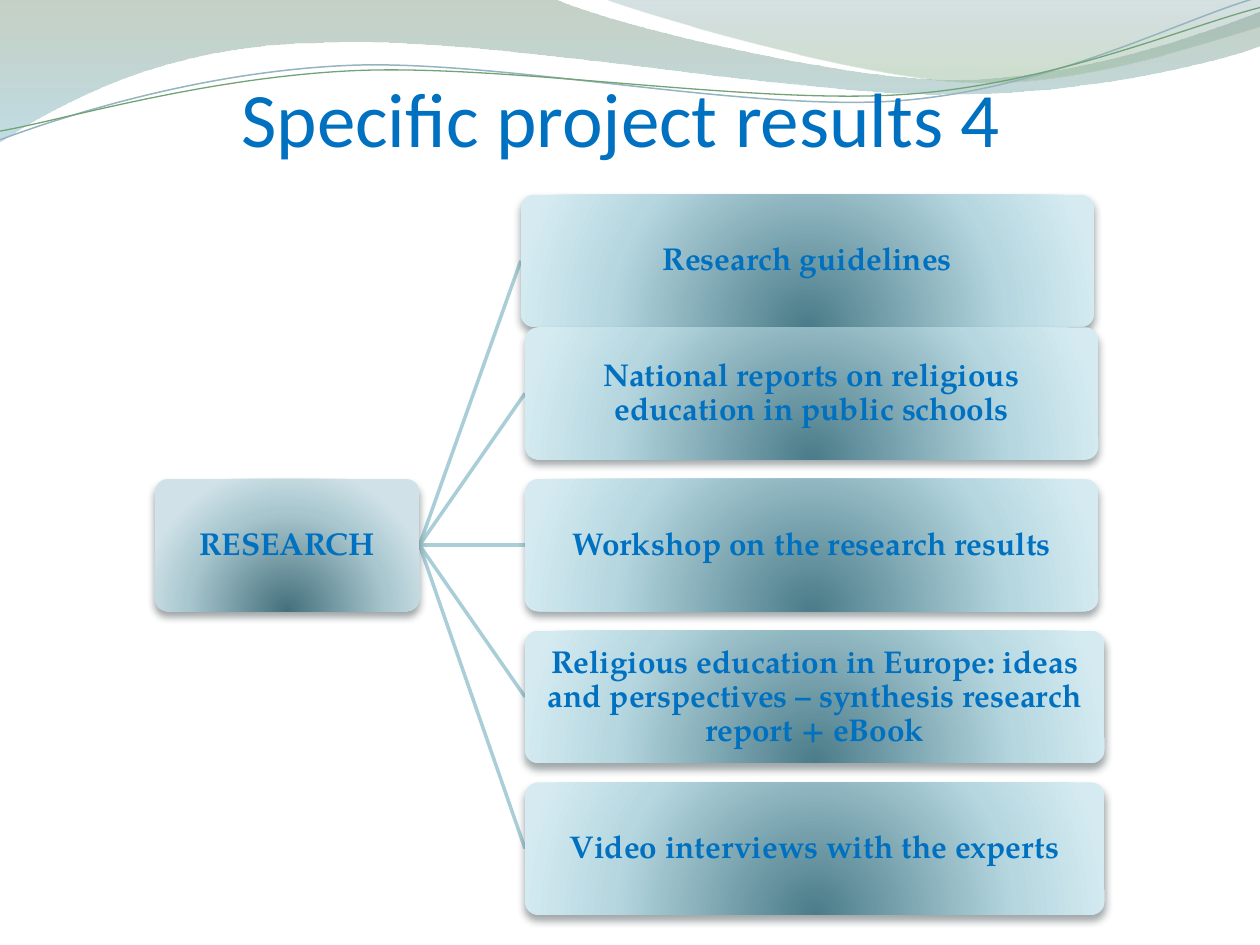
from lxml.etree import SubElement
from pptx import Presentation
from pptx.dml.color import RGBColor
from pptx.enum.shapes import MSO_CONNECTOR, MSO_SHAPE
from pptx.enum.text import MSO_ANCHOR, PP_ALIGN
from pptx.oxml import parse_xml
from pptx.oxml.ns import nsdecls, qn
from pptx.util import Pt

COLORS = {
    "text": "0070C0", "link": "A9CED7",
    "wave_blue": "94B5BE", "wave_green": "72A376",
    "root_shadow": "354245", "result_shadow": "3B484C",
}
# Gradient stops: position %, colour, opacity %
ROOT_STOPS = [(0, "44707C", 100), (68, "A9C7CF", 100), (100, "D0E2E8", 100)]
RESULT_STOPS = [(0, "4B7C89", 100), (68, "B6D7E0", 100), (100, "D5EBF1", 100)]
LINEAR = '<a:lin ang="5400000" scaled="1"/>'
RADIAL = ('<a:path path="circle">'
          '<a:fillToRect l="50000" t="130000" r="50000" b="-30000"/></a:path>')


def set_gradient(sp, stops, direction):
    gs = "".join(
        f'<a:gs pos="{pos * 1000}"><a:srgbClr val="{color}">'
        f'<a:alpha val="{alpha * 1000}"/></a:srgbClr></a:gs>'
        for pos, color, alpha in stops)
    fill = parse_xml(f'<a:gradFill {nsdecls("a")} rotWithShape="1">'
                     f'<a:gsLst>{gs}</a:gsLst>{direction}</a:gradFill>')
    sp._element.spPr.insert(2, fill)  # after the position and the geometry


def add_curve(shapes, start, segments, close):
    """Draw lines (2 numbers) and Bezier segments (6 numbers), in points."""
    points = [(seg[i] * 100, seg[i + 1] * 100)
              for seg in segments for i in range(0, len(seg), 2)]
    builder = shapes.build_freeform(start[0] * 100, start[1] * 100, scale=Pt(1) / 100)
    builder.add_line_segments(points, close=close)
    sp = builder.convert_to_shape()
    sp.shadow.inherit = False
    steps = iter(list(sp._element.iter(qn("a:lnTo"))))
    for seg in segments:
        first = next(steps)
        if len(seg) == 6:  # join three steps into one Bezier segment
            first.tag = qn("a:cubicBezTo")
            for _ in range(2):
                step = next(steps)
                first.append(step[0])
                step.getparent().remove(step)
    return sp


prs = Presentation()
prs.slide_width, prs.slide_height = Pt(720), Pt(540)
s = prs.slides.add_slide(prs.slide_layouts[5])

# Wave bands across the top
bands = [
    ((0, -0.7),
     [(316.8, -0.7), (342.7, 12.2, 478, 45.4, 545.8, 45.4),
      (614.2, 45.4, 689.8, 18.7, 720, 6.5), (720.7, 25.9),
      (707.8, 31.7, 626.4, 54.7, 537.1, 54), (447.8, 54, 275, 20.2, 185, 24.5),
      (92.9, 25.2, 33.1, 59.8, -0.7, 81.4)],
     [(0, "809980", 45), (100, "8DC1CF", 55)]),
    ((344.9, -0.7),
     [(366.5, 7.9, 491, 44.6, 553.7, 46.8),
      (616.3, 49.7, 691.9, 23, 720, 15.1), (720, 0)],
     [(0, "779BA4", 30), (80, "96B996", 45)]),
]
for start, segments, stops in bands:
    sp = add_curve(s.shapes, start, segments, True)
    sp.line.fill.background()
    set_gradient(sp, stops, LINEAR)

wave_lines = [
    ((0, 79.9),
     [(34.6, 67, 113.8, 41, 199.4, 37.4), (284.4, 33.8, 427, 64.1, 513.4, 57.6),
      (599.8, 51.1, 675.4, 10.8, 718.6, -1.4)], "wave_blue", 0.85),
    ((0, 74.9),
     [(33.8, 69.1, 118.1, 43.9, 203.8, 40.3), (290.2, 36.7, 429.8, 59.8, 516.2, 54),
      (601.9, 48.2, 677.5, 15.1, 720, 4.3)], "wave_green", 0.75),
]
for start, segments, color, width in wave_lines:
    sp = add_curve(s.shapes, start, segments, False)
    sp.fill.background()
    sp.line.color.rgb = RGBColor.from_string(COLORS[color])
    sp.line.width = Pt(width)

# Title, in front of the waves
title = s.shapes.title
title._element.getparent().append(title._element)
title.left, title.top, title.width, title.height = Pt(31), Pt(31.7), Pt(648), Pt(61.2)
tf = title.text_frame
tf.text = "Specific project results 4"
tf.vertical_anchor = MSO_ANCHOR.BOTTOM
tf.margin_left = tf.margin_right = tf.margin_bottom = 0
tf.margin_top = Pt(3.6)
p = tf.paragraphs[0]
p.alignment = PP_ALIGN.CENTER
p.font.name, p.font.size = "Calibri", Pt(44)
p.font.color.rgb = RGBColor.from_string(COLORS["text"])

# Research tree: the root and its five results
BOX_H = 75.6
ROW_TOP, ROW_STEP = 187, 86.7
ROOT_LEFT, ROOT_W = 88.5, 151.2
root_top = ROW_TOP + ROW_STEP
results = [
    ("Research guidelines", 297.6, 111.2, 327.6),
    ("National reports on religious education in public schools",
     300, ROW_TOP, 327.6),
    ("Workshop on the research results", 300, root_top, 327.6),
    ("Religious education in Europe: ideas and perspectives – synthesis "
     "research report + eBook", 300, ROW_TOP + 2 * ROW_STEP, 331.2),
    ("Video interviews with the experts", 300, ROW_TOP + 3 * ROW_STEP, 331.2),
]

for _, left, top, _ in results:
    link = s.shapes.add_connector(
        MSO_CONNECTOR.STRAIGHT, Pt(ROOT_LEFT + ROOT_W), Pt(root_top + BOX_H / 2),
        Pt(left), Pt(top + BOX_H / 2))
    link.line.color.rgb = RGBColor.from_string(COLORS["link"])
    link.line.width = Pt(2)
    SubElement(link._element.spPr, qn("a:effectLst"))

boxes = [("RESEARCH", ROOT_LEFT, root_top, ROOT_W, ROOT_STOPS, "root_shadow")]
boxes += [(*result, RESULT_STOPS, "result_shadow") for result in results]
for text, left, top, width, stops, shadow in boxes:
    sp = s.shapes.add_shape(MSO_SHAPE.ROUNDED_RECTANGLE,
                            Pt(left), Pt(top), Pt(width), Pt(BOX_H))
    sp.adjustments[0] = 0.1
    sp.line.fill.background()
    set_gradient(sp, stops, RADIAL)
    sp.shadow.inherit = False
    sp._element.spPr.find(qn("a:effectLst")).append(parse_xml(
        f'<a:outerShdw {nsdecls("a")} blurRad="{Pt(4.5)}" dist="{Pt(3)}" '
        f'dir="5400000" rotWithShape="0"><a:srgbClr val="{COLORS[shadow]}">'
        '<a:alpha val="48000"/></a:srgbClr></a:outerShdw>'))
    tf = sp.text_frame
    tf.text = text
    tf.word_wrap = True
    tf.vertical_anchor = MSO_ANCHOR.MIDDLE
    tf.margin_left = tf.margin_right = Pt(3)
    tf.margin_top = tf.margin_bottom = Pt(3)
    p = tf.paragraphs[0]
    p.alignment = PP_ALIGN.CENTER
    p.line_spacing = 0.9
    p.font.name, p.font.size, p.font.bold = "TeX Gyre Pagella", Pt(18), True
    p.font.color.rgb = RGBColor.from_string(COLORS["text"])

prs.save("out.pptx")
